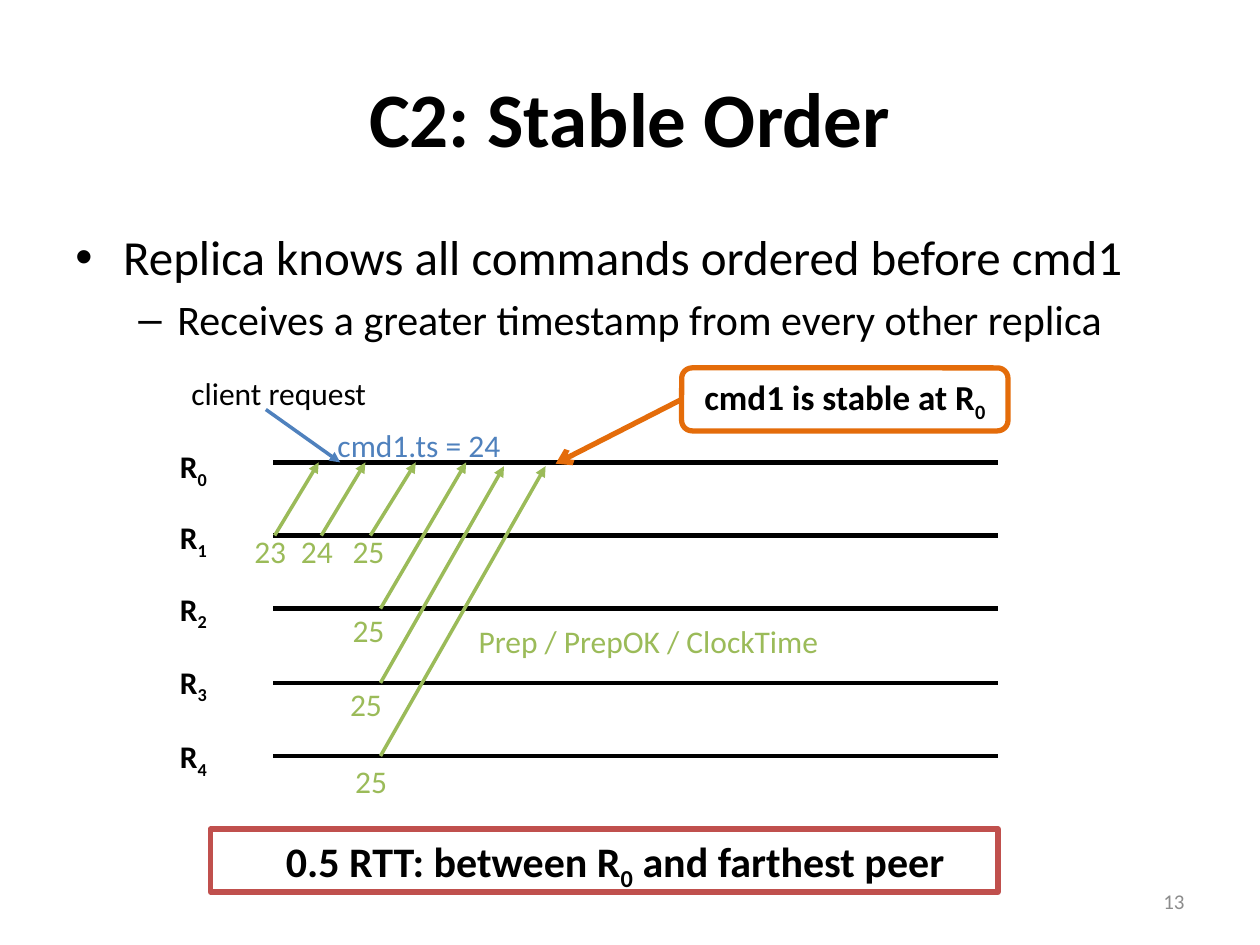
from lxml import etree
from pptx import Presentation
from pptx import util as u
from pptx.dml.color import RGBColor
from pptx.enum import shapes, text
from pptx.oxml.ns import qn

PX = 9144  # 100 px to the inch
BLACK = RGBColor(0x00, 0x00, 0x00)
WHITE = RGBColor(0xFF, 0xFF, 0xFF)
GRAY = RGBColor(0x8C, 0x8C, 0x8C)
BLUE = RGBColor(0x4F, 0x81, 0xBD)
GREEN = RGBColor(0x9B, 0xBB, 0x59)
RED = RGBColor(0xC0, 0x50, 0x4D)
ORANGE = RGBColor(0xE4, 0x6C, 0x0A)
LEFT, CENTER, RIGHT = text.PP_ALIGN.LEFT, text.PP_ALIGN.CENTER, text.PP_ALIGN.RIGHT
TOP, MIDDLE = text.MSO_ANCHOR.TOP, text.MSO_ANCHOR.MIDDLE

prs = Presentation()
prs.slide_width, prs.slide_height = 1000 * PX, 750 * PX
slide = prs.slides.add_slide(prs.slide_layouts[6])


def add_text(box, parts, size, color=BLACK, bold=False, align=LEFT, anchor=TOP, wrap=True):
    """Fill a box given as a shape or (x, y, w, h); odd parts are subscripts."""
    if isinstance(box, tuple):
        box = slide.shapes.add_textbox(*(v * PX for v in box))
    frame = box.text_frame
    frame.word_wrap, frame.vertical_anchor = wrap, anchor
    if not wrap:
        frame.auto_size = text.MSO_AUTO_SIZE.SHAPE_TO_FIT_TEXT
    paragraph = frame.paragraphs[0]
    if paragraph.runs:
        paragraph = frame.add_paragraph()
    paragraph.alignment = align
    for i, part in enumerate(parts):
        run = paragraph.add_run()
        run.text = part
        run.font.name, run.font.size, run.font.bold = "Calibri", u.Pt(size), bold
        run.font.color.rgb = color
        if i % 2:
            run._r.get_or_add_rPr().set("baseline", "-25000")
    return box, paragraph


def add_line(x1, y1, x2, y2, color, width, head=None):
    line = slide.shapes.add_connector(
        shapes.MSO_CONNECTOR.STRAIGHT, x1 * PX, y1 * PX, x2 * PX, y2 * PX)
    line.line.color.rgb, line.line.width = color, u.Pt(width)
    if head:
        etree.SubElement(line.line._get_or_add_ln(), qn("a:tailEnd"), type=head)
    etree.SubElement(line._element.spPr, qn("a:effectLst"))


# Title and bullets
add_text((50, 30, 900, 125), ["C2: Stable Order"], 44, bold=True, align=CENTER, anchor=MIDDLE)

body = (50, 175, 900, 495)
for bullet, margin, hang, size, words in [
    ("•", 38, 38, 28, "Replica knows all commands ordered before cmd1"),
    ("–", 81, 31, 24, "Receives a greater timestamp from every other replica"),
]:
    body, paragraph = add_text(body, [words], size)
    paragraph.space_before = u.Pt(size * 0.2)
    props = paragraph._p.get_or_add_pPr()
    props.set("marL", str(margin * PX))
    props.set("indent", str(-hang * PX))
    etree.SubElement(props, qn("a:buFont"), typeface="Arial")
    etree.SubElement(props, qn("a:buChar"), char=bullet)

# Replica timelines
timeline_y = [367, 425, 483, 542, 600]
label_y = [350, 406, 463, 521, 580]
for replica, (y, top) in enumerate(zip(timeline_y, label_y)):
    add_line(217, y, 792, y, BLACK, 2.5)
    add_text((133, top, 43, 40), ["R", str(replica)], 18, bold=True, wrap=False)

# Client request
add_line(211, 325, 270, 367, BLUE, 2, "triangle")
add_text((142, 292, 161, 40), ["client request"], 18, wrap=False)
add_text((258, 333, 151, 40), ["cmd1.ts = 24"], 18, BLUE, wrap=False)

# Messages to R0: sender, start x, arrival x and y, timestamp and its place
for sender, start, end, end_y, stamp, x, y in [
    (1, 218, 253, 367, "23", 192, 417),
    (1, 255, 290, 367, "24", 229, 417),
    (1, 294, 330, 367, "25", 270, 417),
    (2, 302, 370, 367, "25", 270, 480),
    (3, 302, 400, 370, "25", 268, 539),
    (4, 302, 433, 370, "25", 272, 600),
]:
    add_line(start, timeline_y[sender], end, end_y, GREEN, 2, "triangle")
    add_text((x, y, 46, 40), [stamp], 18, GREEN, wrap=False)
add_text((370, 489, 293, 40), ["Prep / PrepOK / ClockTime"], 18, GREEN, wrap=False)

# Latency and stability boxes
latency = slide.shapes.add_shape(
    shapes.MSO_SHAPE.RECTANGLE, 167 * PX, 658 * PX, 625 * PX, 50 * PX)
stable = slide.shapes.add_shape(
    shapes.MSO_SHAPE.ROUNDED_RECTANGLE, 541 * PX, 292 * PX, 259 * PX, 50 * PX)
for box, color in [(latency, RED), (stable, ORANGE)]:
    box.shadow.inherit = False
    box.line.color.rgb, box.line.width = color, u.Pt(3)
latency.fill.background()
stable.fill.solid()
stable.fill.fore_color.rgb = WHITE
_, paragraph = add_text(latency, ["0.5 RTT: between R", "0", " and farthest peer"], 24, bold=True)
paragraph._p.get_or_add_pPr().set("marL", str(50 * PX))
add_text(stable, ["cmd1 is stable at R", "0"], 20, bold=True, align=CENTER, anchor=MIDDLE)
add_line(541, 317, 441, 368, ORANGE, 3, "arrow")

# Slide number
add_text((900, 695, 50, 40), ["13"], 12, GRAY, align=RIGHT, anchor=MIDDLE)

prs.save("out.pptx")
